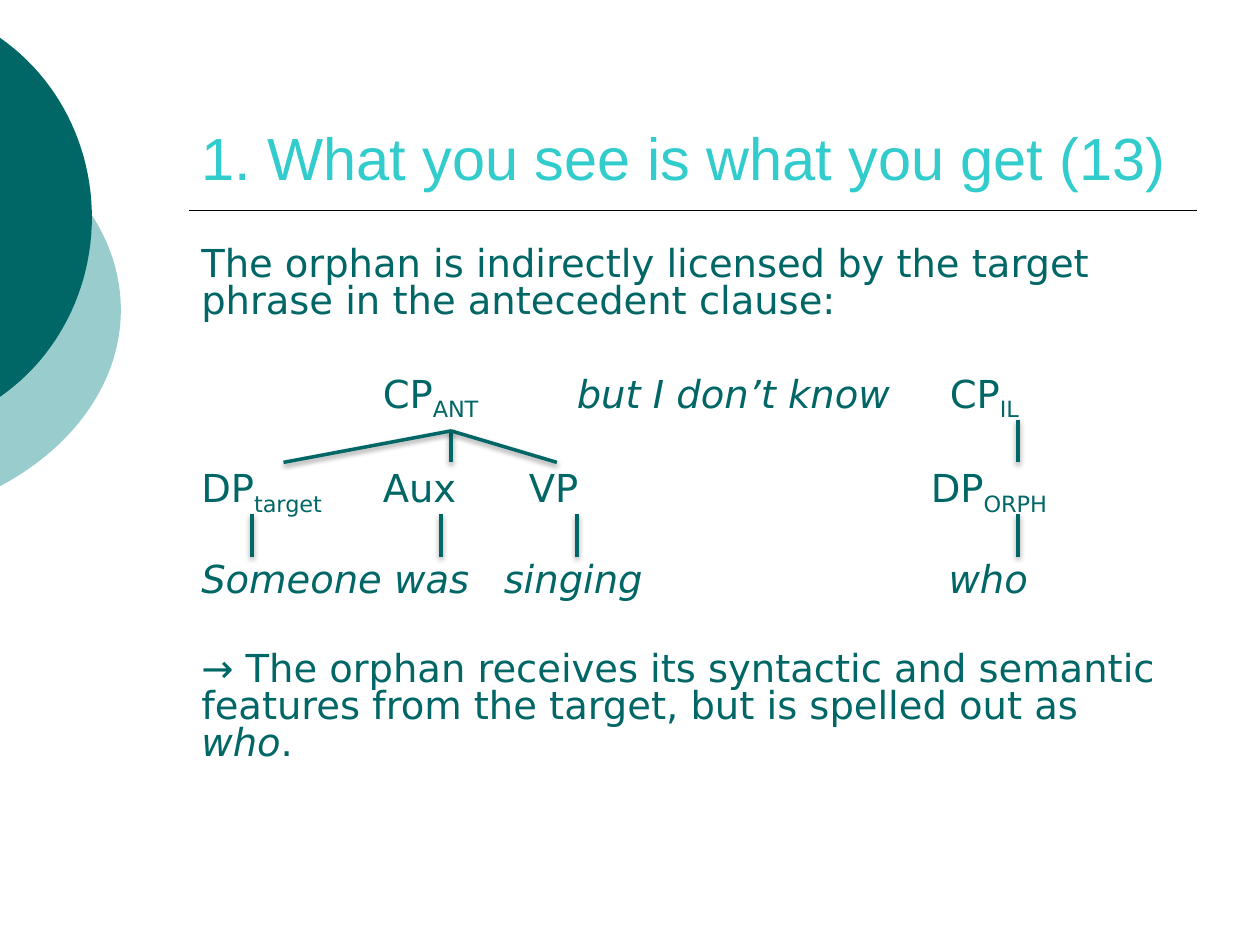
from dataclasses import dataclass

from lxml import etree
from pptx import Presentation
from pptx.dml.color import RGBColor
from pptx.enum.shapes import MSO_CONNECTOR
from pptx.enum.text import MSO_ANCHOR, MSO_AUTO_SIZE, PP_ALIGN
from pptx.oxml.ns import qn
from pptx.util import Inches, Pt

STRAIGHT = MSO_CONNECTOR.STRAIGHT
TOP, BOTTOM = MSO_ANCHOR.TOP, MSO_ANCHOR.BOTTOM
LEFT = PP_ALIGN.LEFT
NO_AUTOFIT = MSO_AUTO_SIZE.NONE
TITLE_ONLY = 5


@dataclass(frozen=True)
class Theme:
    dark: RGBColor = RGBColor(0x00, 0x66, 0x66)
    pale: RGBColor = RGBColor(0x99, 0xCC, 0xCC)
    title: RGBColor = RGBColor(0x33, 0xCC, 0xCC)
    rule: RGBColor = RGBColor(0x00, 0x00, 0x00)
    title_font: str = "Arial"
    body_font: str = "DejaVu Sans"
    title_size: Pt = Pt(34)
    body_size: Pt = Pt(22)
    first_gap: Pt = Pt(4.4)
    row_gap: Pt = Pt(30)
    line_spacing: float = 0.8


THEME = Theme()

# Run styles
PLAIN, ITALIC, SUBSCRIPT = "plain", "italic", "subscript"

# Each paragraph: tab stops in inches from the text edge, then its runs
PARAGRAPHS = [
    ([], [("The orphan is indirectly licensed by the target phrase "
           "in the antecedent clause:", PLAIN)]),
    ([1.44, 2.98, 5.94], [("\tCP", PLAIN), ("ANT", SUBSCRIPT),
                          ("\tbut I don’t know", ITALIC),
                          ("\tCP", PLAIN), ("IL", SUBSCRIPT)]),
    ([1.44, 2.6, 5.79], [("DP", PLAIN), ("target", SUBSCRIPT),
                         ("\tAux\tVP\tDP", PLAIN), ("ORPH", SUBSCRIPT)]),
    ([2.4, 5.93], [("Someone was\tsinging\twho", ITALIC)]),
    ([], [("→ The orphan receives its syntactic and semantic features "
           "from the target, but is spelled out as ", PLAIN),
          ("who", ITALIC), (".", PLAIN)]),
]


def add_run(paragraph, text, font_name, size, color):
    run = paragraph.add_run()
    run.text = text
    run.font.name = font_name
    run.font.size = size
    run.font.color.rgb = color
    return run


def add_line(shapes, start, end, color, width, shadow=False):
    line = shapes.add_connector(STRAIGHT, *map(Inches, start + end))
    line.line.color.rgb = color
    line.line.width = width
    effects = etree.SubElement(line._element.spPr, qn("a:effectLst"))
    if shadow:
        outer = etree.SubElement(effects, qn("a:outerShdw"), blurRad=str(Pt(3.1)),
                                 dist=str(Pt(1.6)), dir="5400000", rotWithShape="0")
        black = etree.SubElement(outer, qn("a:srgbClr"), val="000000")
        etree.SubElement(black, qn("a:alpha"), val="38000")
    return line


def curve(points, steps=24):
    """Points along a cubic curve through its four control points."""
    for step in range(steps + 1):
        t = step / steps
        weights = ((1 - t) ** 3, 3 * t * (1 - t) ** 2, 3 * t * t * (1 - t), t ** 3)
        yield tuple(sum(w * point[axis] for w, point in zip(weights, points))
                    for axis in (0, 1))


def add_disc(slide, top, width, height, bulge, shoulder, color):
    """Disc cut off by the slide's left edge, symmetric about its middle."""
    middle, bottom = top + height / 2, top + height
    upper = list(curve([(0, top), (bulge, top + shoulder),
                        (width, middle - height / 5), (width, middle)]))
    lower = [(x, top + bottom - y) for x, y in reversed(upper[:-1])]
    outline = [(Inches(x), Inches(y)) for x, y in upper + lower]
    builder = slide.shapes.build_freeform(*outline[0])
    builder.add_line_segments(outline[1:], close=True)
    disc = builder.convert_to_shape()
    disc.shadow.inherit = False
    disc.fill.solid()
    disc.fill.fore_color.rgb = color
    disc.line.fill.background()


def add_decoration(slide):
    add_disc(slide, 1.06, 0.96, 2.8, 0.6, 0.32, THEME.pale)
    add_disc(slide, 0.3, 0.73, 2.85, 0.46, 0.32, THEME.dark)


def add_title(slide, left, top, width, height):
    title = slide.shapes.title
    title.left, title.top, title.width, title.height = map(
        Inches, (left, top, width, height))
    frame = title.text_frame
    frame.auto_size = NO_AUTOFIT
    frame.vertical_anchor = BOTTOM
    paragraph = frame.paragraphs[0]
    paragraph.alignment = LEFT
    add_run(paragraph, "1. What you see is what you get (13)",
            THEME.title_font, THEME.title_size, THEME.title)
    # Rule under the title
    rule_y = top + height + 0.09
    add_line(slide.shapes, (left, rule_y), (left + width, rule_y), THEME.rule, Pt(1))


def set_tabs(paragraph, stops):
    tabs = etree.SubElement(paragraph._p.get_or_add_pPr(), qn("a:tabLst"))
    for stop in stops:
        etree.SubElement(tabs, qn("a:tab"), pos=str(Inches(stop)), algn="l")


def add_body(slide, left, top, width, height):
    frame = slide.shapes.add_textbox(*map(Inches, (left, top, width, height))).text_frame
    frame.word_wrap = True
    frame.vertical_anchor = TOP
    for index, (stops, runs) in enumerate(PARAGRAPHS):
        paragraph = frame.add_paragraph() if index else frame.paragraphs[0]
        paragraph.alignment = LEFT
        paragraph.line_spacing = THEME.line_spacing
        paragraph.space_before = THEME.row_gap if index else THEME.first_gap
        if stops:
            set_tabs(paragraph, stops)
        for text, style in runs:
            run = add_run(paragraph, text, THEME.body_font, THEME.body_size, THEME.dark)
            run.font.italic = style == ITALIC
            if style == SUBSCRIPT:
                run._r.get_or_add_rPr().set("baseline", "-25000")


def add_tree_lines(slide, left, top):
    """Branches from the clause nodes, then stems down to the words."""
    branches = slide.shapes.add_group_shape().shapes
    root = (left + 2.08, top + 0.09)
    for offset in (2.92, 2.08, 0.75):
        add_line(branches, root, (left + offset, top + 0.34), THEME.dark, Pt(2), True)
    orphan = 6.58
    stems = [(orphan, 0)] + [(offset, 0.75) for offset in (0.5, 2, 3.08, orphan)]
    for offset, drop in stems:
        x, y = left + offset, top + drop
        add_line(slide.shapes, (x, y), (x, y + 0.34), THEME.dark, Pt(2), True)


def main():
    presentation = Presentation()
    presentation.slide_width, presentation.slide_height = Inches(10), Inches(7.5)
    slide = presentation.slides.add_slide(presentation.slide_layouts[TITLE_ONLY])
    add_decoration(slide)
    add_title(slide, 1.5, 0.33, 8, 1.25)
    add_body(slide, 1.5, 1.92, 7.8, 5.17)
    add_tree_lines(slide, 1.5, 3.33)
    presentation.save("out.pptx")


if __name__ == "__main__":
    main()
